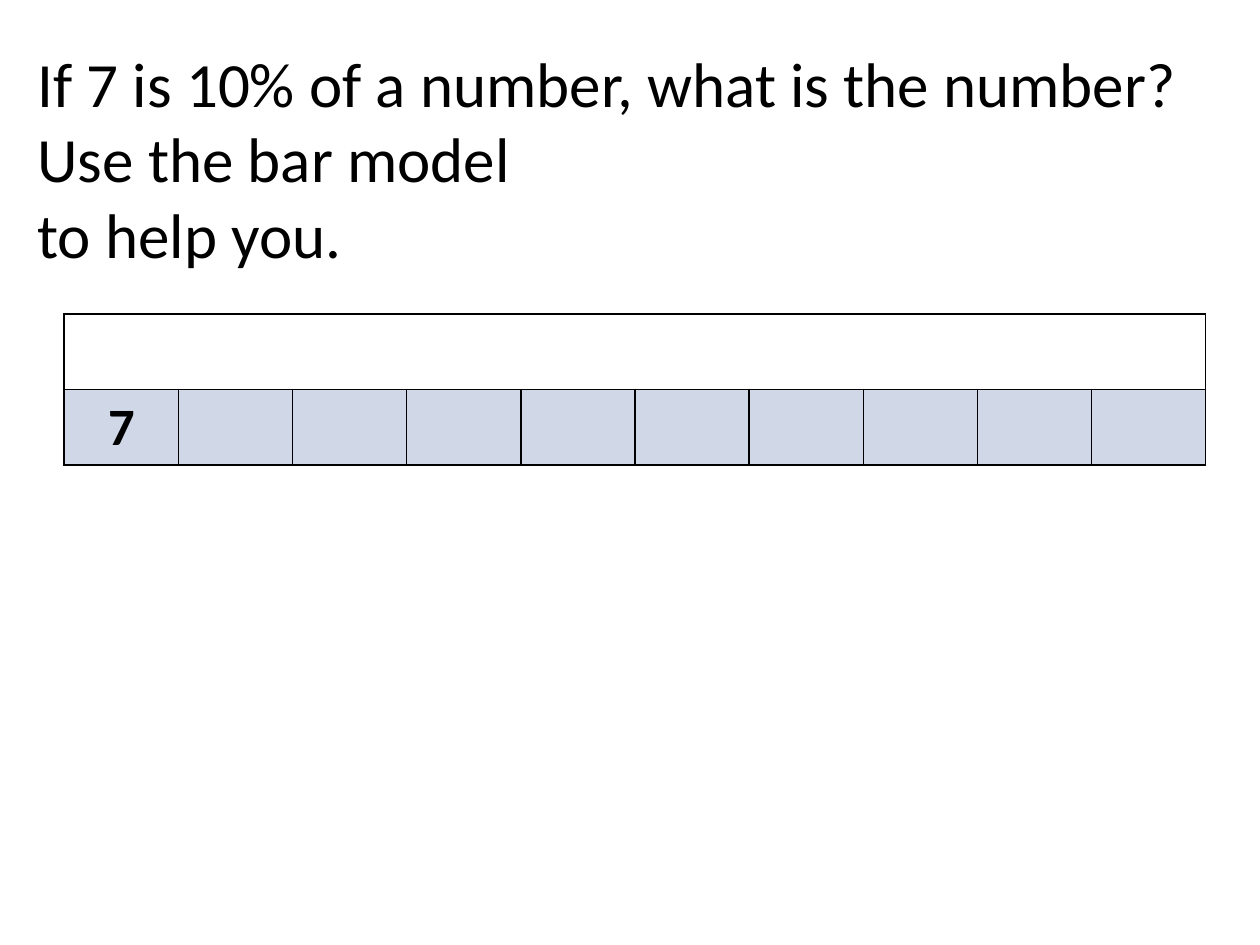
import pptx
import pptx.dml.color
import pptx.enum.text
import pptx.oxml
import pptx.oxml.ns
import pptx.util

BLACK = pptx.dml.color.RGBColor(0x00, 0x00, 0x00)
WHITE = pptx.dml.color.RGBColor(0xFF, 0xFF, 0xFF)
PALE_BLUE = pptx.dml.color.RGBColor(0xD0, 0xD8, 0xE8)

WIDTH, HEIGHT = pptx.util.Inches(10), pptx.util.Inches(7.5)
PARTS = 10
QUESTION = (
    "If 7 is 10% of a number, what is the number?",
    "Use the bar model",
    "to help you.",
)


def write(para, text, **formats):
    span = para.add_run()
    span.text = text
    span.font.color.rgb = BLACK
    for name, value in {"name": "Calibri", **formats}.items():
        setattr(span.font, name, value)


def add_question(page, left, top, width, height):
    box = page.shapes.add_textbox(left, top, width, height)
    frame = box.text_frame
    frame.word_wrap = True
    frame.auto_size = pptx.enum.text.MSO_AUTO_SIZE.SHAPE_TO_FIT_TEXT
    for index, line in enumerate(QUESTION):
        para = frame.add_paragraph() if index else frame.paragraphs[0]
        write(para, line, size=pptx.util.Pt(36))


def style_cell(cell, color):
    # Borders come before the fill in the cell properties
    properties = cell._tc.get_or_add_tcPr()
    for side in ("lnL", "lnR", "lnT", "lnB"):
        properties.append(pptx.oxml.parse_xml(
            f'<a:{side} {pptx.oxml.ns.nsdecls("a")} w="{pptx.util.Pt(1)}">'
            f'<a:solidFill><a:srgbClr val="{BLACK}"/></a:solidFill></a:{side}>'))
    cell.fill.solid()
    cell.fill.fore_color.rgb = color
    cell.vertical_anchor = pptx.enum.text.MSO_ANCHOR.MIDDLE


def add_bar_model(page, left, top, part_width, row_height):
    table = page.shapes.add_table(
        2, PARTS, left, top, PARTS * part_width, 2 * row_height).table
    for column in table.columns:
        column.width = part_width
    for row, color in zip(table.rows, (WHITE, PALE_BLUE)):
        row.height = row_height
        for cell in row.cells:
            style_cell(cell, color)

    # The whole on top, the known tenth below
    table.cell(0, 0).merge(table.cell(0, PARTS - 1))
    para = table.cell(1, 0).text_frame.paragraphs[0]
    para.alignment = pptx.enum.text.PP_ALIGN.CENTER
    write(para, "7", size=pptx.util.Pt(30), bold=True)


def main():
    deck = pptx.Presentation()
    deck.slide_width, deck.slide_height = WIDTH, HEIGHT
    page = deck.slides.add_slide(deck.slide_layouts[6])
    add_question(page, int(WIDTH * 0.02), int(HEIGHT * 0.04),
                 int(WIDTH * 0.96), int(HEIGHT * 0.26))
    add_bar_model(page, pptx.util.Inches(0.51), pptx.util.Inches(2.49),
                  pptx.util.Inches(0.906), int(HEIGHT * 0.08))
    deck.save("out.pptx")


if __name__ == "__main__":
    main()
